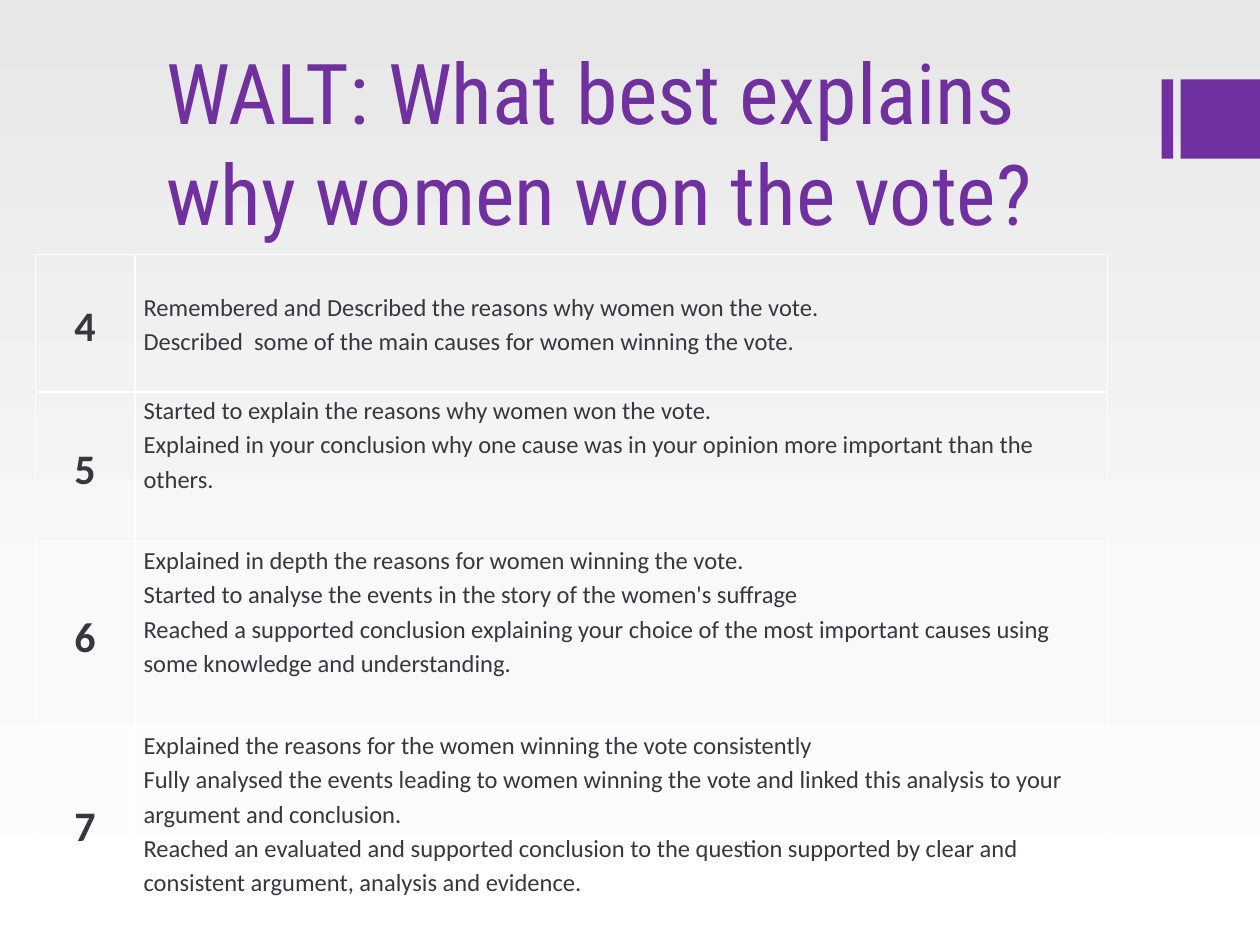
from lxml import etree
from pptx import Presentation
from pptx.dml.color import RGBColor
from pptx.enum.shapes import MSO_SHAPE as Shape
from pptx.enum.text import MSO_ANCHOR as Anchor, MSO_AUTO_SIZE as AutoSize, PP_ALIGN as Align
from pptx.oxml import parse_xml
from pptx.oxml.ns import nsdecls, qn
from pptx.util import Inches, Pt

PURPLE = RGBColor(0x70, 0x30, 0xA0)
INK = RGBColor(0x38, 0x36, 0x3E)
WHITE = RGBColor(0xFF, 0xFF, 0xFF)
BACKDROP = [(0, RGBColor(0xE7, 0xE7, 0xE7)), (65, RGBColor(0xF9, 0xF9, 0xF9)), (100, WHITE)]

COLUMN_WIDTHS = [0.79, 7.72]
# Level, row height, top margin of the criteria, criteria
LEVELS = [
    ("4", 1.09, 0.27, [
        "Remembered and Described the reasons why women won the vote.",
        "Described  some of the main causes for women winning the vote."]),
    ("5", 1.19, 0, [
        "Started to explain the reasons why women won the vote.",
        "Explained in your conclusion why one cause was in your opinion more important than the others."]),
    ("6", 1.47, 0, [
        "Explained in depth the reasons for women winning the vote.",
        "Started to analyse the events in the story of the women's suffrage",
        "Reached a supported conclusion explaining your choice of the most important causes using "
        "some knowledge and understanding."]),
    ("7", 1.53, 0, [
        "Explained the reasons for the women winning the vote consistently",
        "Fully analysed the events leading to women winning the vote and linked this analysis to your "
        "argument and conclusion.",
        "Reached an evaluated and supported conclusion to the question supported by clear and "
        "consistent argument, analysis and evidence."]),
]


def set_backdrop(slide):
    stops = "".join(f'<a:gs pos="{percent * 1000}"><a:srgbClr val="{color}"/></a:gs>'
                    for percent, color in BACKDROP)
    fill = slide.background.fill
    fill.solid()
    bg_pr = slide.element.cSld.find(qn("p:bg")).find(qn("p:bgPr"))
    solid = bg_pr.find(qn("a:solidFill"))
    bg_pr.replace(solid, parse_xml(
        f'<a:gradFill {nsdecls("a")} rotWithShape="1"><a:gsLst>{stops}</a:gsLst>'
        '<a:lin ang="5400000" scaled="0"/></a:gradFill>'))


def write(frame, lines, *, size, color, font, bold=False, align=Align.LEFT, spacing=1.0, after=0):
    for index, line in enumerate(lines):
        paragraph = frame.paragraphs[0] if index == 0 else frame.add_paragraph()
        paragraph.alignment = align
        paragraph.line_spacing = spacing
        paragraph.space_before, paragraph.space_after = Pt(0), Pt(after)
        run = paragraph.add_run()
        run.text = line
        run.font.name, run.font.size, run.font.bold = font, Pt(size), bold
        run.font.color.rgb = color


def add_accent(slide, left, width):
    accent = slide.shapes.add_shape(Shape.RECTANGLE, Inches(left), Inches(0.63),
                                    Inches(width), Inches(0.63))
    accent.shadow.inherit = False
    accent.fill.solid()
    accent.fill.fore_color.rgb = PURPLE
    accent.line.fill.background()


def add_title(slide, text):
    title = slide.shapes.title
    title.left, title.top = Inches(1.22), Inches(0)
    title.width, title.height = Inches(8), Inches(1.97)
    frame = title.text_frame
    frame.auto_size, frame.word_wrap = AutoSize.NONE, True
    frame.vertical_anchor = Anchor.BOTTOM
    write(frame, [text], size=48, color=PURPLE, font="Roboto Condensed")


def style_cell(cell, anchor, top=0):
    properties = cell._tc.get_or_add_tcPr()
    for side in ("lnL", "lnR", "lnT", "lnB"):
        border = etree.SubElement(properties, qn(f"a:{side}"), w=str(Pt(1)))
        fill = etree.SubElement(border, qn("a:solidFill"))
        etree.SubElement(fill, qn("a:srgbClr"), val=str(WHITE))
    cell.fill.background()
    cell.margin_left = cell.margin_right = Inches(0.07)
    cell.margin_top, cell.margin_bottom = Inches(top), Inches(0)
    cell.vertical_anchor = anchor


def add_levels_table(slide):
    heights = [height for _, height, _, _ in LEVELS]
    table = slide.shapes.add_table(len(LEVELS), 2, Inches(0.28), Inches(2.02),
                                   Inches(sum(COLUMN_WIDTHS)), Inches(sum(heights))).table
    table.first_row = table.horz_banding = False
    for column, width in zip(table.columns, COLUMN_WIDTHS):
        column.width = Inches(width)
    for row, (level, height, top, criteria) in zip(table.rows, LEVELS):
        row.height = Inches(height)
        level_cell, criteria_cell = row.cells
        style_cell(level_cell, Anchor.MIDDLE)
        write(level_cell.text_frame, [level], size=24, color=INK, font="Calibri", bold=True,
              align=Align.CENTER, spacing=1.15, after=10)
        style_cell(criteria_cell, Anchor.TOP, top)
        write(criteria_cell.text_frame, criteria, size=14, color=INK, font="Calibri", spacing=1.15)


def main():
    deck = Presentation()
    deck.slide_width, deck.slide_height = Inches(10), Inches(7.5)
    slide = deck.slides.add_slide(deck.slide_layouts[5])
    set_backdrop(slide)
    # Accent bars at the right edge
    add_accent(slide, 9.22, 0.09)
    add_accent(slide, 9.37, 0.63)
    # Lesson question and levels
    add_title(slide, "WALT: What best explains why women won the vote?")
    add_levels_table(slide)
    deck.save("out.pptx")


if __name__ == "__main__":
    main()
